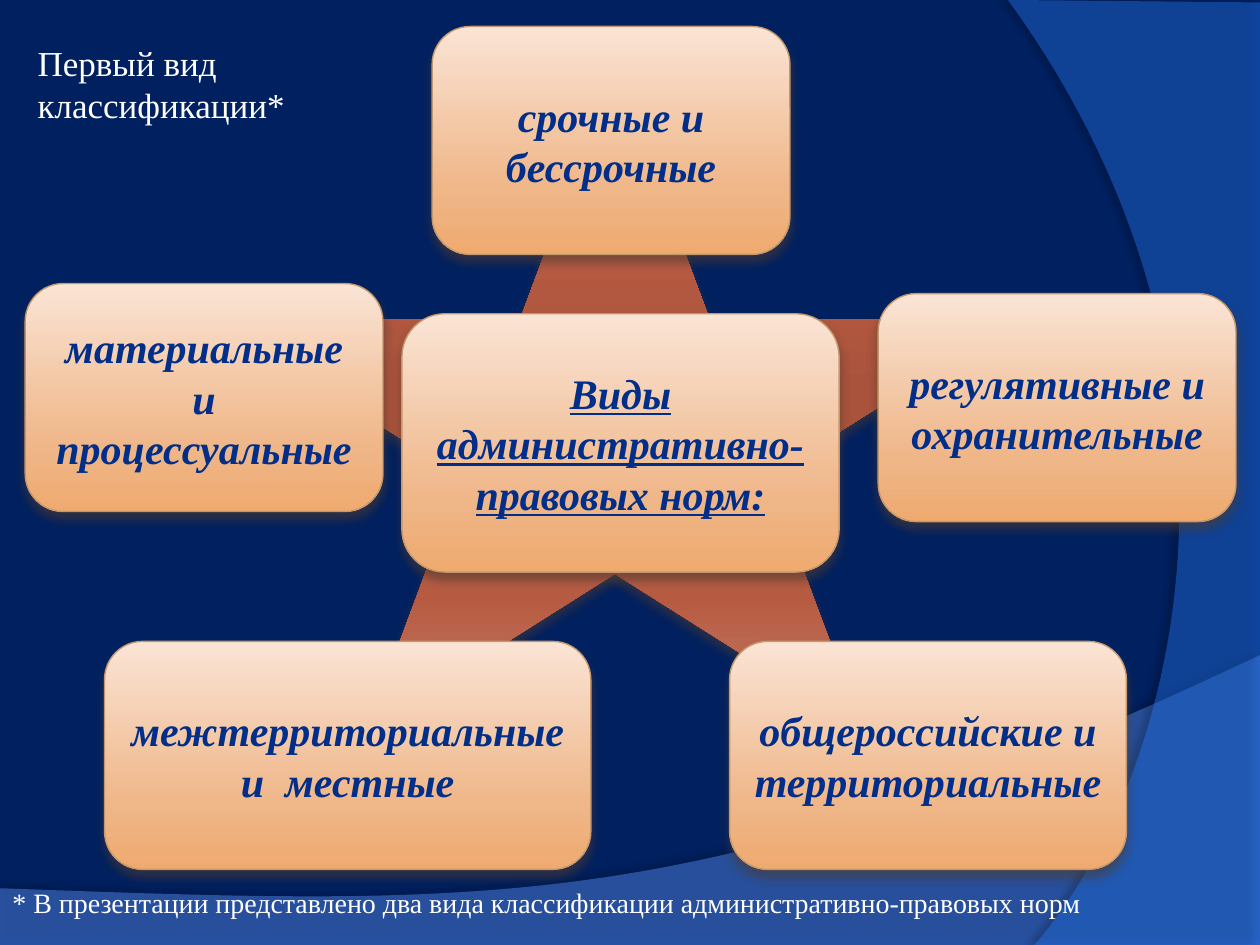
from lxml import etree
from pptx import Presentation
from pptx.dml.color import RGBColor
from pptx.enum.shapes import MSO_SHAPE
from pptx.enum.text import MSO_ANCHOR, PP_ALIGN
from pptx.oxml.ns import qn
from pptx.util import Inches, Pt

STAR, ROUNDED = MSO_SHAPE.STAR_5_POINT, MSO_SHAPE.ROUNDED_RECTANGLE
CENTER, LEFT = PP_ALIGN.CENTER, PP_ALIGN.LEFT
MIDDLE, TOP = MSO_ANCHOR.MIDDLE, MSO_ANCHOR.TOP

WIDTH, HEIGHT = 10, 7.5
COLORS = {
    "page": "002060", "wave": "5790F7", "arc": "267DFF", "border": "C3986D",
    "label": "002E89", "white": "FFFFFF", "black": "000000", "brown": "4E3B30",
}
STAR_STOPS = [(0, "CD8473"), (25, "B75B42"), (50, "AA533C"),
              (65, "AA533C"), (80, "B65B42"), (100, "C77D6B")]
CARD_STOPS = [(0, "FAE4D5"), (72, "EFB688"), (100, "EFAA6F")]
CARD_SHADOW = ("brown", 60, 6, 4, 90)

SWOOSHES = [
    ("wave", 45, ("black", 35, 4, 3.5, 270),
     [(0, 7.05), (0, HEIGHT), (WIDTH, HEIGHT), (WIDTH, 5.2)],
     [(5.59, 7.29), (3.91, 7.19), (0, 7.05)]),
    ("arc", 40, ("black", 45, 4, 4, 180),
     [(WIDTH, 0.02), (WIDTH, HEIGHT), (8.21, HEIGHT)],
     [(9.35, 6.19), (10.18, 3), (8, 0)]),
]
STAR_FRAME = (1.69, 0.52, 6.38, 5.28)
CENTER_CARD = ("Виды административно- правовых норм:", 3.19, 2.49, 3.47, 2.05)
CARD_WIDTH, CARD_HEIGHT, LOWER_ROW = 2.84, 1.81, 5.09
CARDS = [
    ("общероссийские и территориальные", 5.79, LOWER_ROW, 3.15),
    ("межтерриториальные и  местные", 0.83, LOWER_ROW, 3.86),
    ("регулятивные и охранительные", 6.97, 2.33, CARD_WIDTH),
    ("срочные и бессрочные", 3.43, 0.21, CARD_WIDTH),
    ("материальные и процессуальные", 0.2, 2.25, CARD_WIDTH),
]
NOTES = [
    ("Первый вид классификации*", 20, (0.2, 0.28, 2.28, 0.77)),
    ("* В презентации представлено два вида классификации "
     "административно-правовых норм", 16, (0, 6.98, 8.82, 0.37)),
]
LABEL_FORMAT = {"size": Pt(24), "bold": True, "italic": True}


def rgb(name):
    return RGBColor.from_string(COLORS[name])


def add_child(parent, tag, **values):
    child = etree.SubElement(parent, qn(tag))
    for key, value in values.items():
        child.set(key, str(value))
    return child


def add_shadow(shape, name, opacity, blur, distance, angle):
    shape.shadow.inherit = False
    effects = shape._element.spPr.find(qn("a:effectLst"))
    outer = add_child(effects, "a:outerShdw", blurRad=Pt(blur), dist=Pt(distance),
                      dir=angle * 60000, algn="ctr", rotWithShape=0)
    color = add_child(outer, "a:srgbClr", val=COLORS[name])
    add_child(color, "a:alpha", val=opacity * 1000)


def fill_gradient(shape, stops):
    shape.fill.gradient()
    shape.fill.gradient_angle = 270
    stop_list = shape._element.spPr.find(".//" + qn("a:gsLst"))
    for stop in list(stop_list):
        stop_list.remove(stop)
    for position, color in stops:
        stop = add_child(stop_list, "a:gs", pos=position * 1000)
        add_child(stop, "a:srgbClr", val=color)


def curve(start, first, second, end, steps=60):
    for step in range(1, steps + 1):
        t = step / steps
        weights = ((1 - t) ** 3, 3 * t * (1 - t) ** 2, 3 * t * t * (1 - t), t ** 3)
        yield tuple(sum(w * point[axis] for w, point in
                        zip(weights, (start, first, second, end))) for axis in (0, 1))


def add_swoosh(page, color, opacity, shadow, corners, bend):
    outline = corners + list(curve(corners[-1], *bend))
    points = [(Inches(x), Inches(y)) for x, y in outline]
    builder = page.shapes.build_freeform(*points[0])
    builder.add_line_segments(points[1:], close=True)
    swoosh = builder.convert_to_shape()
    swoosh.fill.solid()
    swoosh.fill.fore_color.rgb = rgb(color)
    fill_color = swoosh._element.spPr.find(qn("a:solidFill")).find(qn("a:srgbClr"))
    add_child(fill_color, "a:alpha", val=opacity * 1000)
    swoosh.line.fill.background()
    add_shadow(swoosh, *shadow)


def add_gradient_shape(page, kind, frame, stops):
    shape = page.shapes.add_shape(kind, *map(Inches, frame))
    fill_gradient(shape, stops)
    shape.line.fill.background()
    add_shadow(shape, *CARD_SHADOW)
    return shape


def write(box, text, color, align, anchor, styles):
    frame = box.text_frame
    frame.word_wrap = True
    frame.vertical_anchor = anchor
    para = frame.paragraphs[0]
    para.alignment = align
    span = para.add_run()
    span.text = text
    for key, value in {"name": "Times New Roman", **styles}.items():
        setattr(span.font, key, value)
    span.font.color.rgb = rgb(color)


def add_card(page, text, frame, **styles):
    card = add_gradient_shape(page, ROUNDED, frame, CARD_STOPS)
    card.line.color.rgb = rgb("border")
    card.line.width = Pt(0.79)
    write(card, text, "label", CENTER, MIDDLE, {**LABEL_FORMAT, **styles})


def main():
    deck = Presentation()
    deck.slide_width, deck.slide_height = Inches(WIDTH), Inches(HEIGHT)
    page = deck.slides.add_slide(deck.slide_layouts[6])
    page.background.fill.solid()
    page.background.fill.fore_color.rgb = rgb("page")

    for swoosh in SWOOSHES:
        add_swoosh(page, *swoosh)
    add_gradient_shape(page, STAR, STAR_FRAME, STAR_STOPS)
    add_card(page, CENTER_CARD[0], CENTER_CARD[1:], underline=True)
    for text, left, top, width in CARDS:
        add_card(page, text, (left, top, width, CARD_HEIGHT))
    for text, size, frame in NOTES:
        box = page.shapes.add_textbox(*map(Inches, frame))
        write(box, text, "white", LEFT, TOP, {"size": Pt(size)})
    deck.save("out.pptx")


if __name__ == "__main__":
    main()
